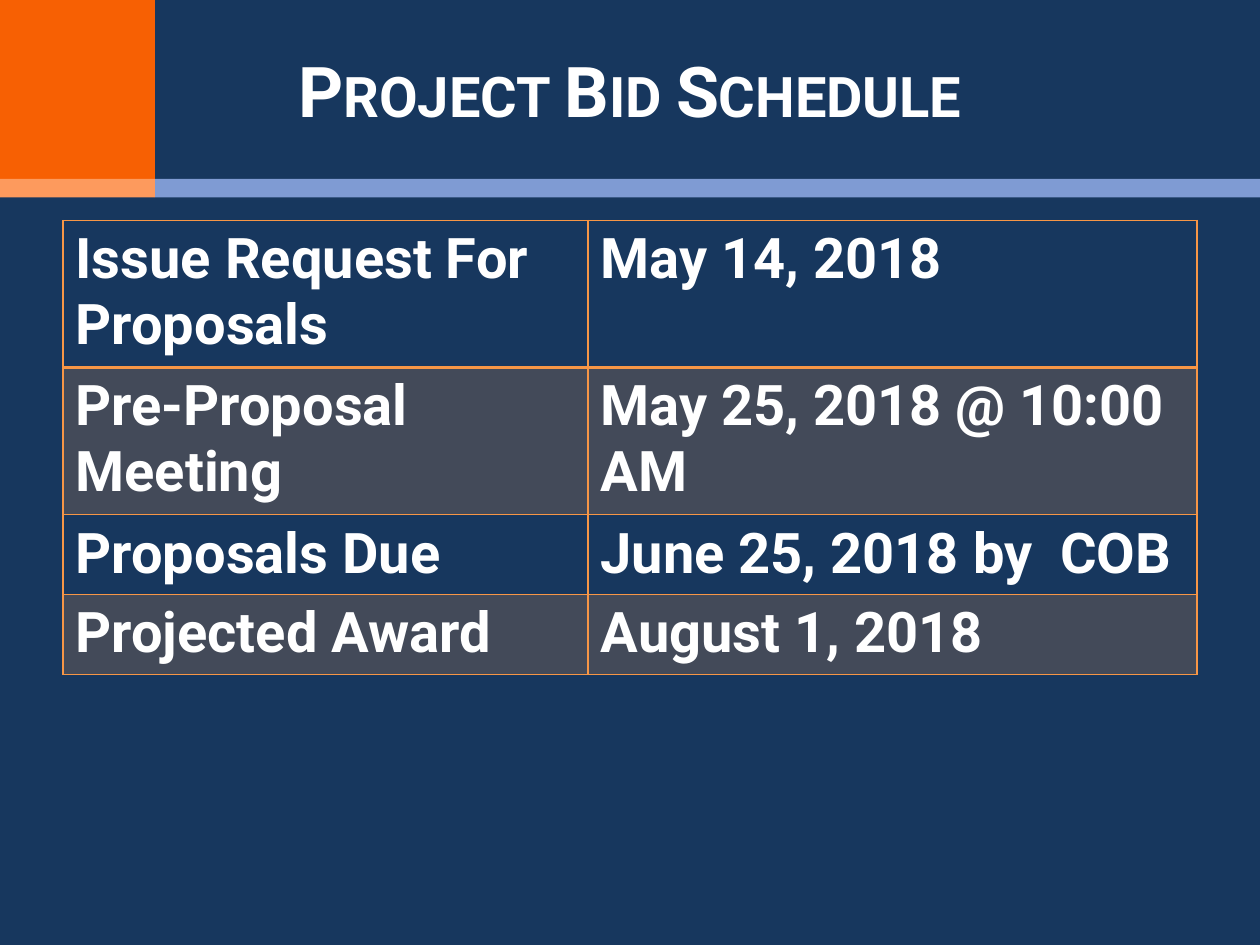
from lxml.etree import SubElement
from pptx import Presentation
from pptx.dml.color import RGBColor
from pptx.enum.shapes import MSO_SHAPE
from pptx.enum.text import MSO_ANCHOR, PP_ALIGN
from pptx.oxml.ns import qn
from pptx.util import Pt

TITLE = "Project Bid Schedule"
SCHEDULE = [
    ("Issue Request For Proposals", "May 14, 2018"),
    ("Pre-Proposal Meeting", "May 25, 2018 @ 10:00 AM"),
    ("Proposals Due", "June 25, 2018 by  COB"),
    ("Projected Award", "August 1, 2018"),
]
COLORS = {
    "navy": "17375E",
    "orange": "F76003",
    "peach": "FD9A5D",
    "periwinkle": "7F9BD3",
    "accent": "F79646",
    "white": "FFFFFF",
}
FONT = "Roboto"
SLIDE_W, SLIDE_H = 720, 540
CORNER_W, STRIPE_TOP, STRIPE_H = 88.5, 102.3, 10.5
MARGIN = 36
TABLE_TOP = 126
COLUMN_WIDTHS = (300, 348)
ROW_HEIGHTS = (82.3, 82.3, 44.6, 44.6)
HEADER_RULE = 2
RULE = 1

# Bars from back to front: left, top, width, height, colour
BARS = [
    (0, 0, CORNER_W, STRIPE_TOP, "orange"),
    (CORNER_W, STRIPE_TOP, SLIDE_W - CORNER_W, STRIPE_H, "periwinkle"),
    (0, STRIPE_TOP, CORNER_W, STRIPE_H, "peach"),
]


def rgb(name):
    return RGBColor.from_string(COLORS[name])


def add_bar(slide, left, top, width, height, color):
    bar = slide.shapes.add_shape(
        MSO_SHAPE.RECTANGLE, Pt(left), Pt(top), Pt(width), Pt(height))
    bar.shadow.inherit = False
    bar.fill.solid()
    bar.fill.fore_color.rgb = rgb(color)
    bar.line.fill.background()


def write(paragraph, text, size):
    run = paragraph.add_run()
    run.text = text
    run.font.name = FONT
    run.font.size = Pt(size)
    run.font.bold = True
    run.font.color.rgb = rgb("white")
    return run


def add_title(slide):
    box = slide.shapes.add_textbox(Pt(MARGIN), Pt(6), Pt(SLIDE_W - 2 * MARGIN), Pt(90))
    frame = box.text_frame
    frame.word_wrap = True
    frame.vertical_anchor = MSO_ANCHOR.MIDDLE
    paragraph = frame.paragraphs[0]
    paragraph.alignment = PP_ALIGN.CENTER
    run = write(paragraph, TITLE, 40)
    run.font._element.set("cap", "small")


def set_borders(cell, top, bottom):
    properties = cell._tc.get_or_add_tcPr()
    widths = {"a:lnL": RULE, "a:lnR": RULE, "a:lnT": top, "a:lnB": bottom}
    for side, width in widths.items():
        line = SubElement(properties, qn(side), w=str(Pt(width)))
        solid = SubElement(line, qn("a:solidFill"))
        SubElement(solid, qn("a:srgbClr"), val=COLORS["accent"])


def set_band(cell, shaded):
    if not shaded:
        cell.fill.background()
        return
    cell.fill.solid()
    cell.fill.fore_color.rgb = rgb("accent")
    color = cell._tc.tcPr.find(qn("a:solidFill")).find(qn("a:srgbClr"))
    SubElement(color, qn("a:alpha"), val="20000")


def add_schedule(slide):
    table = slide.shapes.add_table(
        len(SCHEDULE), len(COLUMN_WIDTHS), Pt(MARGIN), Pt(TABLE_TOP),
        Pt(sum(COLUMN_WIDTHS)), Pt(sum(ROW_HEIGHTS))).table
    table.first_row = False
    table.horz_banding = False
    for column, width in zip(table.columns, COLUMN_WIDTHS):
        column.width = Pt(width)
    for r, (milestone, height) in enumerate(zip(SCHEDULE, ROW_HEIGHTS)):
        table.rows[r].height = Pt(height)
        for c, text in enumerate(milestone):
            cell = table.cell(r, c)
            write(cell.text_frame.paragraphs[0], text, 32)
            set_borders(cell,
                        top=HEADER_RULE if r == 1 else RULE,
                        bottom=HEADER_RULE if r == 0 else RULE)
            set_band(cell, shaded=r % 2 == 1)


def main():
    deck = Presentation()
    deck.slide_width, deck.slide_height = Pt(SLIDE_W), Pt(SLIDE_H)
    slide = deck.slides.add_slide(deck.slide_layouts[6])
    slide.background.fill.solid()
    slide.background.fill.fore_color.rgb = rgb("navy")
    for bar in BARS:
        add_bar(slide, *bar)
    add_title(slide)
    add_schedule(slide)
    deck.save("out.pptx")


if __name__ == "__main__":
    main()
